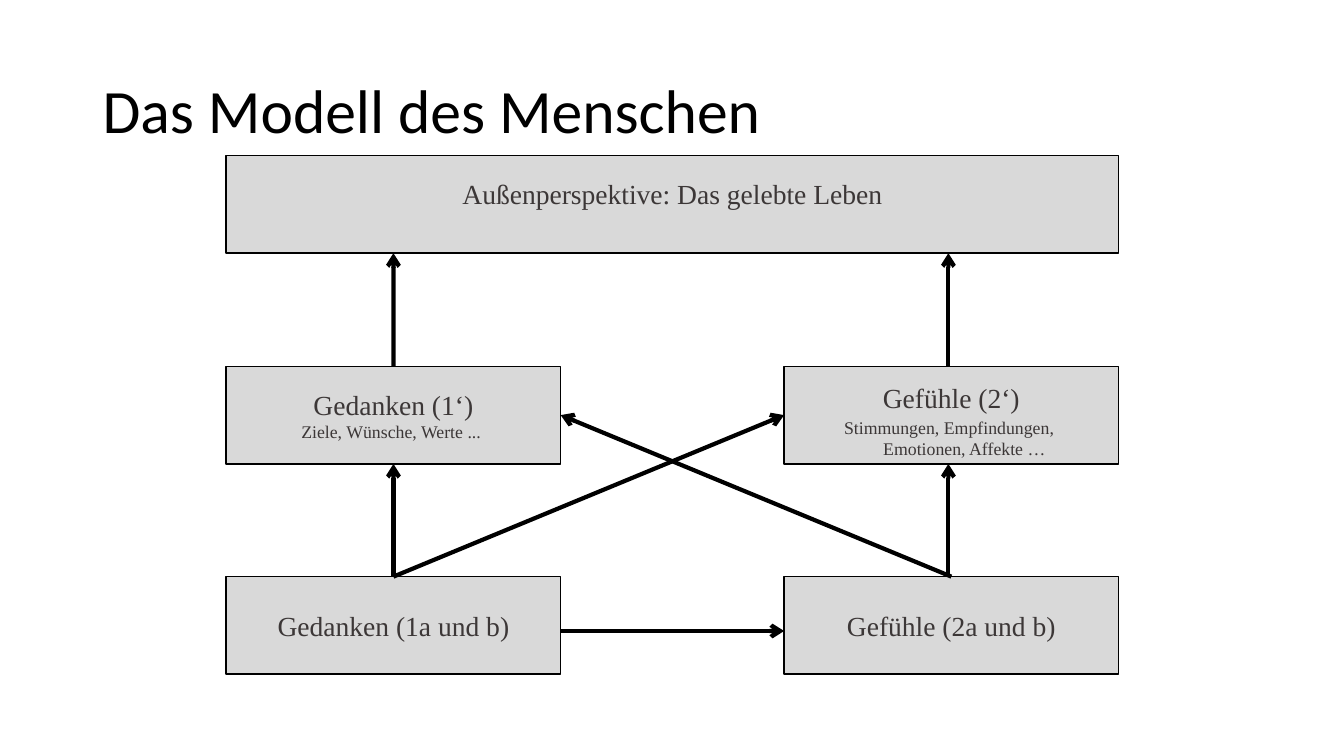
from lxml.etree import SubElement
from pptx import Presentation
from pptx.dml.color import RGBColor
from pptx.enum.shapes import MSO_CONNECTOR, MSO_SHAPE
from pptx.enum.text import MSO_ANCHOR, PP_ALIGN
from pptx.oxml.ns import qn
from pptx.util import Cm, Pt

TOP, LEFT, BOTTOM, RIGHT = range(4)  # connection sites of a rectangle


def rgb(value):
    return RGBColor.from_string(value)


class ModelSlide:
    FILL, INK, BLACK = "D9D9D9", "3C3737", "000000"
    TITLE_FONT, BOX_FONT = "Calibri", "Times New Roman"
    LARGE, SMALL = 19.7, 12.7

    def __init__(self, prs):
        self.s = prs.slides.add_slide(prs.slide_layouts[5])

    def style(self, p, font, size, color, align, hanging):
        p.font.name, p.font.size = font, Pt(size)
        p.font.color.rgb = rgb(color)
        p.alignment = align
        pPr = p._p.get_or_add_pPr()
        pPr.set("marL", str(Cm(hanging)))
        pPr.set("indent", str(-Cm(hanging)))

    def title(self, text, x, y, w, h):
        sp = self.s.shapes.title
        sp.left, sp.top, sp.width, sp.height = Cm(x), Cm(y), Cm(w), Cm(h)
        tf = sp.text_frame
        tf.text = text
        tf.vertical_anchor = MSO_ANCHOR.MIDDLE
        p = tf.paragraphs[0]
        self.style(p, self.TITLE_FONT, 44, self.BLACK, PP_ALIGN.LEFT, 1.4)
        p.line_spacing = 0.9

    def box(self, x, y, w, h, heading, detail=None, hanging=0.66,
            after=0, inset_top=0, inset_bottom=0):
        sp = self.s.shapes.add_shape(MSO_SHAPE.RECTANGLE, Cm(x), Cm(y), Cm(w), Cm(h))
        sp.shadow.inherit = False
        sp.fill.solid()
        sp.fill.fore_color.rgb = rgb(self.FILL)
        sp.line.color.rgb = rgb(self.BLACK)
        sp.line.width = Pt(1)
        tf = sp.text_frame
        tf.word_wrap = True
        tf.vertical_anchor = MSO_ANCHOR.MIDDLE
        tf.margin_left = tf.margin_right = 0
        tf.margin_top, tf.margin_bottom = Cm(inset_top), Cm(inset_bottom)
        tf.text = "\n".join(filter(None, (heading, detail)))
        for p, size in zip(tf.paragraphs, (self.LARGE, self.SMALL)):
            self.style(p, self.BOX_FONT, size, self.INK, PP_ALIGN.CENTER, hanging)
            p.space_after = Pt(after)
        return sp

    def arrow(self, start, end, begin_at=None, end_at=None):
        """Draw from start to end; begin_at and end_at are (box, site) joints."""
        line = self.s.shapes.add_connector(
            MSO_CONNECTOR.STRAIGHT, *(Cm(v) for v in (*start, *end)))
        if begin_at:
            line.begin_connect(*begin_at)
        if end_at:
            line.end_connect(*end_at)
        line.line.color.rgb = rgb(self.BLACK)
        line.line.width = Pt(3)
        SubElement(line.line._get_or_add_ln(), qn("a:tailEnd"), type="arrow")
        SubElement(line._element.spPr, qn("a:effectLst"))


def main():
    prs = Presentation()
    prs.slide_width, prs.slide_height = Cm(33.87), Cm(19.05)
    slide = ModelSlide(prs)
    slide.title("Das Modell des Menschen", 2.33, 1.01, 29.21, 3.68)

    # Grid: two columns, three rows
    w, h = 8.43, 2.46
    left, right = 5.7, 19.76
    outer_y, middle_y, base_y = 3.92, 9.23, 14.53

    # Boxes
    slide.box(left, outer_y, right + w - left, h, "Außenperspektive: Das gelebte Leben",
              hanging=0, inset_bottom=0.56)
    thoughts = slide.box(left, middle_y, w, h, "Gedanken (1‘)", "Ziele, Wünsche, Werte ... ")
    feelings = slide.box(right, middle_y, w, h, "Gefühle (2‘)",
                         "Stimmungen, Empfindungen, \vEmotionen, Affekte …",
                         after=2.1, inset_top=0.25)
    base_thoughts = slide.box(left, base_y, w, h, "Gedanken (1a und b)", after=2.1)
    base_feelings = slide.box(right, base_y, w, h, "Gefühle (2a und b)", after=2.1)

    # Upward arrows
    left_x, right_x = left + w / 2, 23.9
    slide.arrow((left_x, middle_y), (left_x, outer_y + h), (thoughts, TOP))
    slide.arrow((left_x, base_y), (left_x, middle_y + h),
                (base_thoughts, TOP), (thoughts, BOTTOM))
    for lower, upper in ((middle_y, outer_y), (base_y, middle_y)):
        slide.arrow((right_x, lower), (right_x, upper + h))

    # Crossing arrows
    slide.arrow((left_x, base_y), (right, middle_y + h / 2),
                (base_thoughts, TOP), (feelings, LEFT))
    slide.arrow((right + w / 2, base_y), (left + w, middle_y + h / 2),
                (base_feelings, TOP), (thoughts, RIGHT))

    # Arrow between the base boxes
    slide.arrow((left + w, 15.9), (right, 15.9))

    prs.save("out.pptx")


if __name__ == "__main__":
    main()
